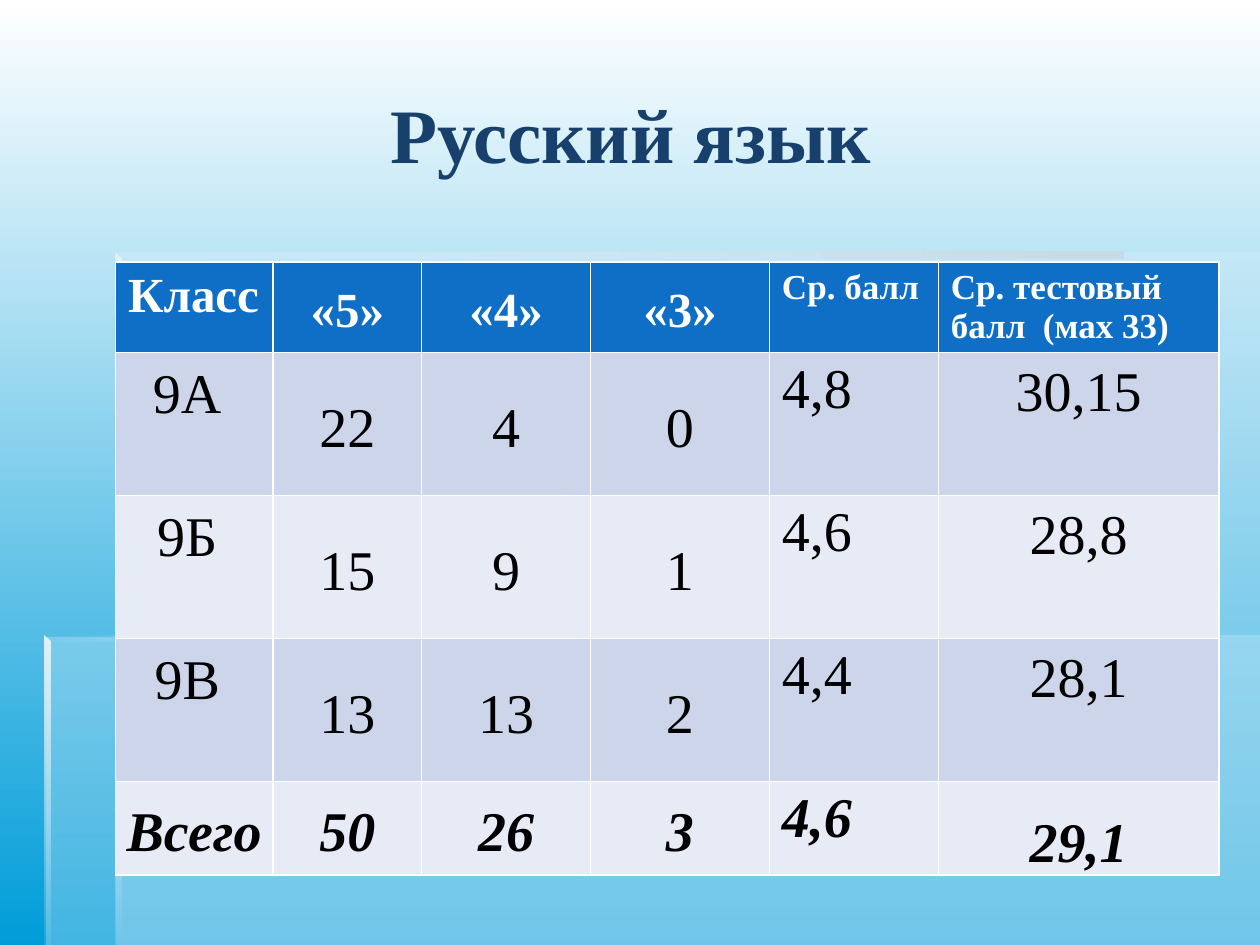
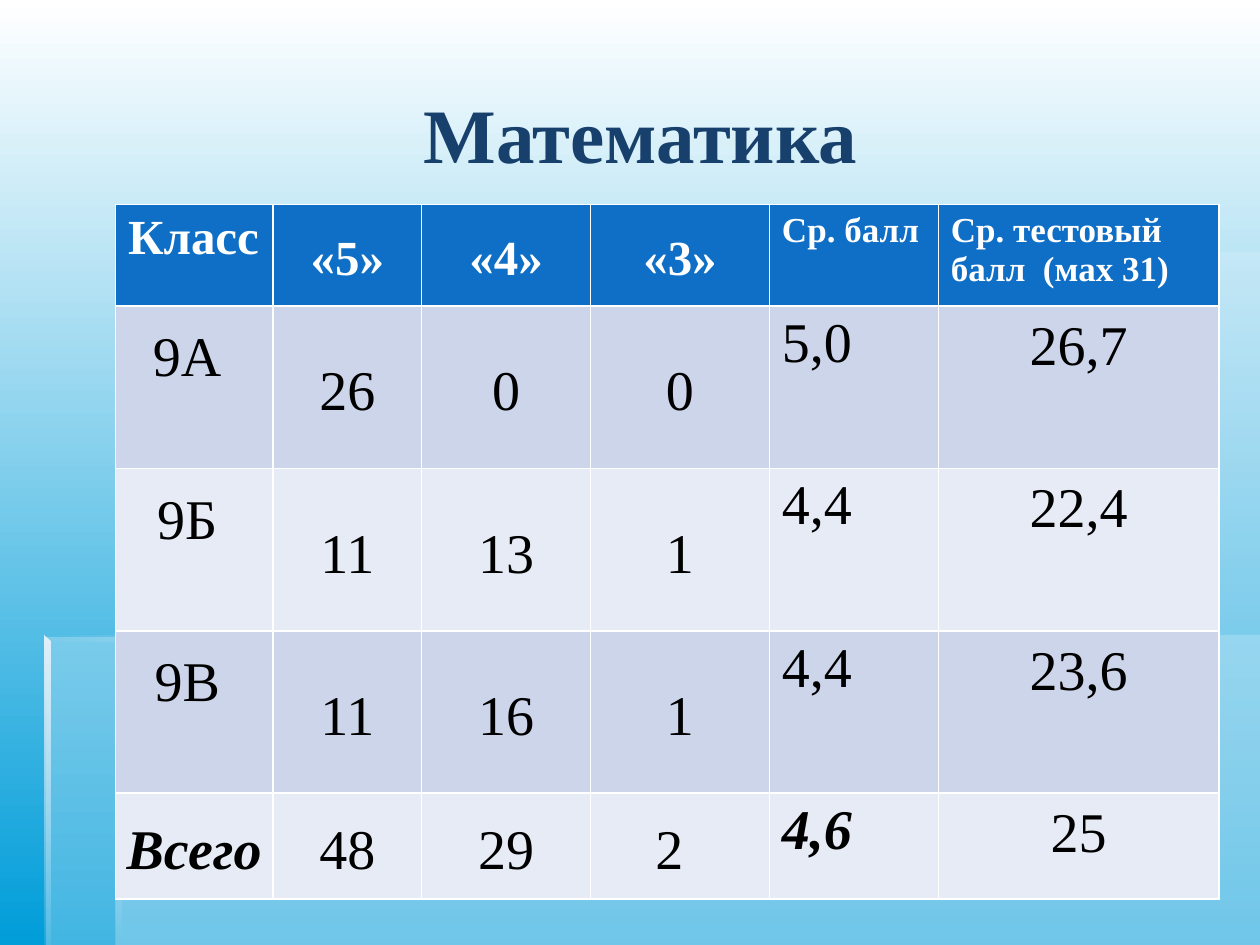
from pptx import Presentation
from pptx.dml.color import RGBColor
from pptx.enum import text as t
from pptx.oxml.ns import qn
from pptx.util import Pt
from lxml import etree

FONT = "Times New Roman"
NAVY, BLUE, WHITE, BLACK = "17406D", "0F6FC6", "FFFFFF", "000000"
BANDS = ["CCD5EA", "E7EBF5"]
SKY = [WHITE, "009DD9"]
PALE, LIGHT, GREY = "DBEFF9", "E0F1FA", "C9DBE4"

# Content: marks per class; "bold" lists the emphasised cells of the last row
HEAD = ["Класс", "«5»", "«4»", "«3»", "Ср. балл"]
COLS = [90, 85, 96.5, 102.2, 96.5, 160.5]
SLIDES = [
    dict(title="Русский язык ", last="Ср. тестовый балл  (маx 33)", top=149.8,
         heights=[51.4, 81.7, 81.7, 81.7, 53.5], bold=range(6), gap=1.5, shift=None,
         rows=[["9А ", "22", "4", "0", "4,8", "30,15"],
               ["9Б ", "15", "9", "1", "4,6", "28,8"],
               ["9В ", "13", "13", "2", "4,4", "28,1"],
               ["Всего", "50", "26", "3", "4,6", "29,1"]]),
    dict(title="Математика", last="Ср. тестовый балл  (маx 31)", top=116.9,
         heights=[58, 92.8, 92.8, 92.8, 60.5], bold=[0, 4], gap=1.15, shift=3,
         rows=[["9А ", "26", "0", "0", "5,0", "26,7"],
               ["9Б ", "11", "13", "1", "4,4", "22,4"],
               ["9В ", "11", "16", "1", "4,4", "23,6"],
               ["Всего", "48", "29", "2", "4,6", "25"]]),
]

# Backdrop: points, colours with opacity in percent, gradient angle
W, H = 720, 540
X, Y = 66, 144       # corner of the upper panel
LX, LY = 25.2, 363   # corner of the lower panel
EDGE = 3.6


def bar(x, y, wide):
    return [(x, y), (x, y + EDGE), (x + wide, y + EDGE), (x + wide, y)]


def post(x, y, end):
    return [(x, y), (x, end), (x + EDGE, end), (x + EDGE, y + EDGE)]


FADE = [(PALE, 0), (GREY, 100)]
DECOR = [
    ([(X, LY), (X, H), (W, H), (W, LY)], [(PALE, 30)], 0),
    ([(X + 1.5, LY + 1), (LX + 1, LY + 1), (LX + 1, H), (W, H), (W, Y), (X + 1.5, Y)],
     [(PALE, 30)], 0),
    (bar(X, Y, 576), FADE, 0),
    (post(X, Y, 367), [(LIGHT, 100), (PALE, 100)], 270),
    (post(X, LY, H), [(LIGHT, 100), (PALE, 0)], 270),
    (bar(LX, LY, 360), FADE, 0),
    (post(LX, LY, H), [(LIGHT, 100), (PALE, 10)], 270),
]


def rgb(code):
    return RGBColor.from_string(code)


def blend(fill, codes, angle):
    fill.gradient()
    fill.gradient_angle = angle
    for stop, code in zip(fill.gradient_stops, codes):
        stop.color.rgb = rgb(code)


def paint(fill, code):
    fill.solid()
    fill.fore_color.rgb = rgb(code)


def style(par, size, code, bold=False, slant=False):
    for run in par.runs:
        font = run.font
        font.name, font.size, font.bold, font.italic = FONT, Pt(size), bold, slant
        font.color.rgb = rgb(code)


def draw(shapes, points, tints, angle):
    points = [(Pt(x), Pt(y)) for x, y in points]
    pen = shapes.build_freeform(*points[0])
    pen.add_line_segments(points[1:], close=True)
    form = pen.convert_to_shape()
    form.shadow.inherit = False
    codes = [code for code, _ in tints]
    if len(codes) == 1:
        paint(form.fill, codes[0])
    else:
        blend(form.fill, codes, angle)
    marks = form._element.spPr.iter(qn("a:srgbClr"))
    for mark, (_, share) in zip(list(marks), tints):
        if share < 100:
            etree.SubElement(mark, qn("a:alpha")).set("val", str(share * 1000))
    form.line.fill.background()
    return form


def dress(layout, slide):
    """Draw the backdrop once and move it to the shared layout."""
    blend(layout.background.fill, SKY, 270)
    tree = layout.shapes._spTree
    for item in DECOR:
        tree.append(draw(slide.shapes, *item)._element)


def set_cell(cell, row, col, data, value):
    head, total = row == 0, row == 4
    paint(cell.fill, BLUE if head else BANDS[(row - 1) % 2])
    cell.text_frame.text = value
    par = cell.text_frame.paragraphs[0]
    if head:
        style(par, 20 if col > 3 else 28, WHITE, True)
    else:
        strong = total and col in data["bold"]
        style(par, 32, BLACK, strong, strong)
    if col == 4 or head and col in (0, 5):
        return
    # Centred cells
    cell.margin_left = cell.margin_right = Pt(5)
    cell.margin_top = cell.margin_bottom = 0
    par.alignment = t.PP_ALIGN.CENTER
    par.line_spacing = 1.15
    if col < 5:
        cell.vertical_anchor = t.MSO_ANCHOR.MIDDLE
    elif total:
        par.line_spacing = data["gap"]
    if col == 0 and not total:
        cell.margin_bottom = Pt(39)
    if total and col == data["shift"]:
        par.alignment = t.PP_ALIGN.LEFT
        cell.margin_left = Pt(37)


def fill_slide(slide, data):
    # Title
    title = slide.shapes.title
    title.left, title.top, title.width, title.height = Pt(36), Pt(19.5), Pt(660), Pt(113)
    frame = title.text_frame
    frame.text = data["title"]
    frame.auto_size = t.MSO_AUTO_SIZE.NONE
    frame.vertical_anchor = t.MSO_ANCHOR.MIDDLE
    frame.paragraphs[0].alignment = t.PP_ALIGN.CENTER
    style(frame.paragraphs[0], 44, NAVY, True)
    # Table
    rows = [HEAD + [data["last"]]] + data["rows"]
    table = slide.shapes.add_table(
        len(rows), len(COLS), Pt(X), Pt(data["top"]),
        Pt(sum(COLS)), Pt(sum(data["heights"]))).table
    for col, wide in zip(table.columns, COLS):
        col.width = Pt(wide)
    for r, values in enumerate(rows):
        table.rows[r].height = Pt(data["heights"][r])
        for c, value in enumerate(values):
            set_cell(table.cell(r, c), r, c, data, value)


def main():
    deck = Presentation()
    deck.slide_width, deck.slide_height = Pt(W), Pt(H)
    layout = deck.slide_layouts[5]
    for n, data in enumerate(SLIDES):
        slide = deck.slides.add_slide(layout)
        if n == 0:
            dress(layout, slide)
        fill_slide(slide, data)
    deck.save("out.pptx")


if __name__ == "__main__":
    main()
